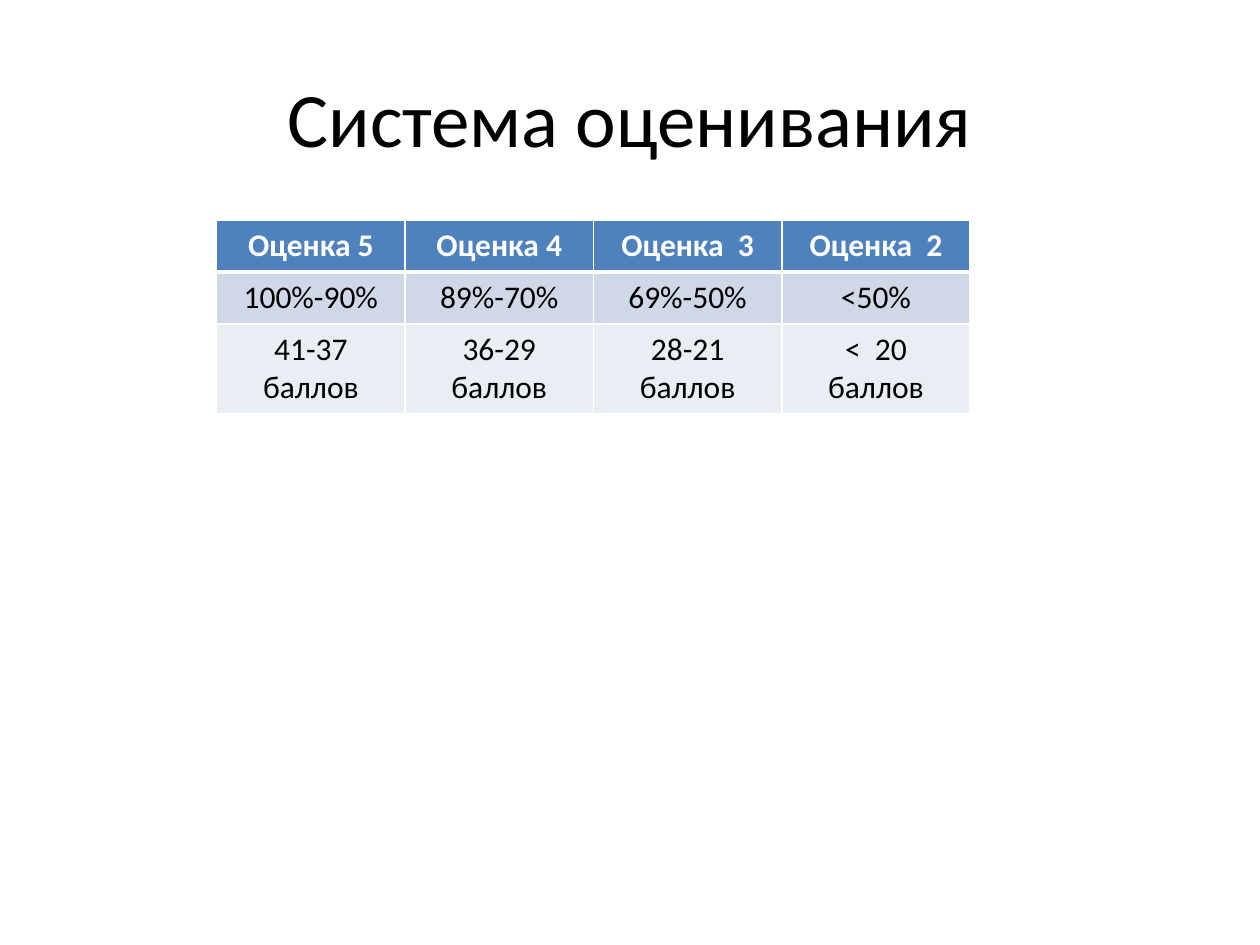
import pptx
import pptx.dml.color
import pptx.enum.text
import pptx.oxml
import pptx.oxml.ns
import pptx.util
from pptx.util import Inches

RGBColor = pptx.dml.color.RGBColor
BLACK = RGBColor(0x00, 0x00, 0x00)
WHITE = RGBColor(0xFF, 0xFF, 0xFF)
HEADER_BLUE = RGBColor(0x4F, 0x81, 0xBD)
BAND_BLUE = RGBColor(0xD0, 0xD8, 0xE8)
BAND_PALE = RGBColor(0xE9, 0xED, 0xF4)

GRADES = [
    ["Оценка 5", "Оценка 4", "Оценка  3", "Оценка  2"],
    ["100%-90%", "89%-70%", "69%-50%", "<50%"],
    ["41-37 баллов", "36-29 баллов", "28-21 баллов", "<  20 баллов"],
]


class SlideBuilder:
    font = "Calibri"
    title_size = 44
    table_size = 18
    row_fills = [HEADER_BLUE, BAND_BLUE, BAND_PALE]

    def __init__(self, deck):
        self.page = deck.slides.add_slide(deck.slide_layouts[5])

    def format_text(self, frame, size, color, bold=False):
        for para in frame.paragraphs:
            para.alignment = pptx.enum.text.PP_ALIGN.CENTER
            for span in para.runs:
                span.font.name = self.font
                span.font.size = pptx.util.Pt(size)
                span.font.bold = bold
                span.font.color.rgb = color

    def title(self, text, left, top, width, height):
        box = self.page.shapes.title
        box.left, box.top, box.width, box.height = left, top, width, height
        box.text_frame.text = text
        box.text_frame.vertical_anchor = pptx.enum.text.MSO_ANCHOR.MIDDLE
        self.format_text(box.text_frame, self.title_size, BLACK)

    def border(self, cell, side, points):
        properties = cell._tc.get_or_add_tcPr()
        properties.append(pptx.oxml.parse_xml(
            f'<a:ln{side} {pptx.oxml.ns.nsdecls("a")} w="{pptx.util.Pt(points)}">'
            f'<a:solidFill><a:srgbClr val="{WHITE}"/></a:solidFill></a:ln{side}>'
        ))

    def table(self, rows, left, top, width, row_height):
        frame = self.page.shapes.add_table(
            len(rows), len(rows[0]), left, top, width, row_height * len(rows)
        )
        for row, texts in enumerate(rows):
            header = row == 0
            widths = {"L": 1, "R": 1, "T": 3 if row == 1 else 1, "B": 3 if header else 1}
            for column, text in enumerate(texts):
                cell = frame.table.cell(row, column)
                cell.text_frame.text = text
                self.format_text(
                    cell.text_frame, self.table_size, WHITE if header else BLACK, header
                )
                for side, points in widths.items():
                    self.border(cell, side, points)
                cell.fill.solid()
                cell.fill.fore_color.rgb = self.row_fills[row]


def main():
    deck = pptx.Presentation()
    deck.slide_width = Inches(10)
    deck.slide_height = Inches(7.5)
    builder = SlideBuilder(deck)
    builder.title("Cистема оценивания", Inches(0.5), Inches(0.3), Inches(9), Inches(1.25))
    builder.table(GRADES, Inches(1.72), Inches(1.75), Inches(5.98), Inches(0.41))
    deck.save("out.pptx")


if __name__ == "__main__":
    main()
